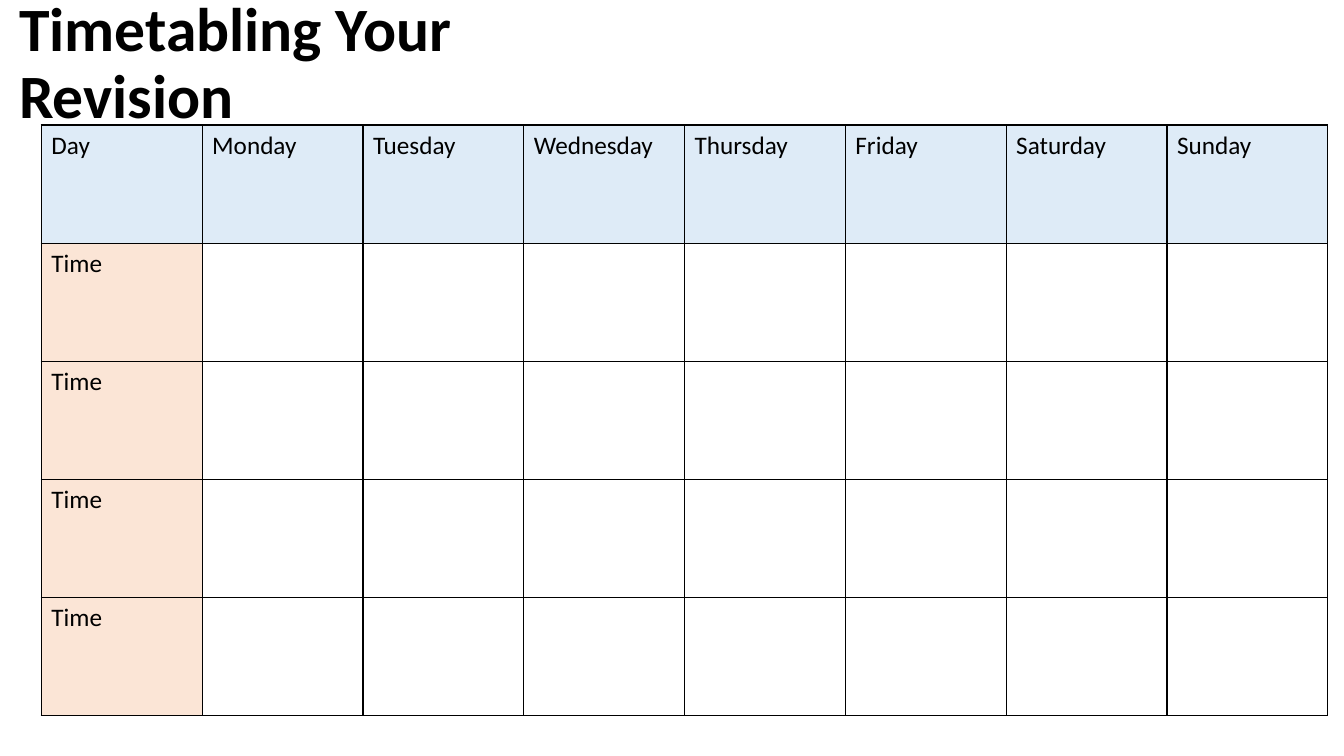
import pptx
import pptx.util
import pptx.dml.color
import pptx.enum.text
import lxml.etree
from pptx.oxml.ns import qn

BLACK = pptx.dml.color.RGBColor(0x00, 0x00, 0x00)
DAY_BLUE = pptx.dml.color.RGBColor(0xDE, 0xEB, 0xF7)
TIME_PEACH = pptx.dml.color.RGBColor(0xFB, 0xE5, 0xD6)
DAYS = ["Day", "Monday", "Tuesday", "Wednesday", "Thursday", "Friday", "Saturday", "Sunday"]
ROWS = 5


def write(tf, text, size=18, bold=False, spacing=1.0):
    p = tf.paragraphs[0]
    p.line_spacing = spacing
    p.alignment = pptx.enum.text.PP_ALIGN.LEFT
    r = p.add_run()
    r.text = text
    r.font.name = "Calibri"
    r.font.size = pptx.util.Pt(size)
    r.font.bold = bold
    r.font.color.rgb = BLACK


def add_borders(cell):
    tcPr = cell._tc.get_or_add_tcPr()
    for i, side in enumerate(("a:lnL", "a:lnR", "a:lnT", "a:lnB")):
        ln = lxml.etree.Element(qn(side), w=str(pptx.util.Pt(1)))
        fill = lxml.etree.SubElement(ln, qn("a:solidFill"))
        lxml.etree.SubElement(fill, qn("a:srgbClr"), val=str(BLACK))
        tcPr.insert(i, ln)


prs = pptx.Presentation()
prs.slide_width = pptx.util.Inches(13.33)
prs.slide_height = pptx.util.Inches(7.5)
s = prs.slides.add_slide(prs.slide_layouts[5])

title = s.shapes.title
title.left, title.top = pptx.util.Inches(0.09), pptx.util.Inches(0.26)
title.width, title.height = pptx.util.Inches(6.57), pptx.util.Inches(0.77)
tf = title.text_frame
tf.word_wrap = True
tf.auto_size = pptx.enum.text.MSO_AUTO_SIZE.NONE
tf.vertical_anchor = pptx.enum.text.MSO_ANCHOR.MIDDLE
write(tf, "Timetabling Your Revision", size=44, bold=True, spacing=0.9)

tbl = s.shapes.add_table(
    ROWS, len(DAYS),
    pptx.util.Inches(0.41), pptx.util.Inches(1.24),
    pptx.util.Inches(12.76), pptx.util.Inches(5.86),
).table
tbl.first_row = False
tbl.horz_banding = False

for row in range(ROWS):
    for col, day in enumerate(DAYS):
        cell = tbl.cell(row, col)
        if row == 0:
            write(cell.text_frame, day)
            cell.fill.solid()
            cell.fill.fore_color.rgb = DAY_BLUE
        elif col == 0:
            write(cell.text_frame, "Time")
            cell.fill.solid()
            cell.fill.fore_color.rgb = TIME_PEACH
        else:
            cell.fill.background()
        add_borders(cell)

prs.save("out.pptx")
